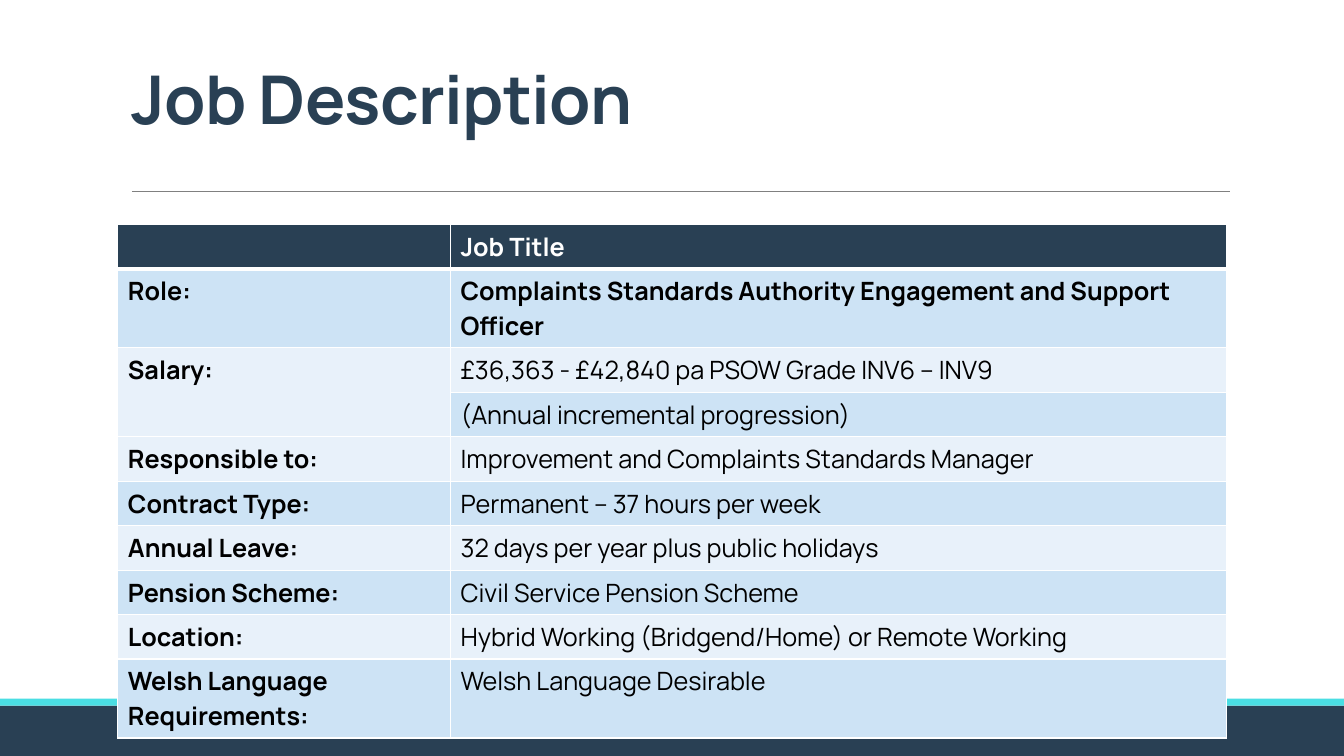
import pptx
import pptx.util
import pptx.dml.color
import pptx.enum.shapes
import pptx.enum.text
import pptx.oxml
import pptx.oxml.ns
from pptx.util import Pt

NAVY, TURQUOISE, WHITE, BLACK = "294054", "4ADEE3", "FFFFFF", "000000"
BAND_COLORS = ["E8F1FA", "CDE3F5"]


def color(value):
    return pptx.dml.color.RGBColor.from_string(value)


def write(frame, text, size=18, bold=False, ink=BLACK, line_spacing=None, tracking=0):
    para = frame.paragraphs[0]
    if line_spacing:
        para.line_spacing = line_spacing
    span = para.add_run()
    span.text = text
    span.font.name = "Manrope"
    span.font.size = Pt(size)
    span.font.bold = bold
    span.font.color.rgb = color(ink)
    if tracking:
        span._r.get_or_add_rPr().set("spc", str(tracking))


deck = pptx.Presentation()
deck.slide_width, deck.slide_height = Pt(960), Pt(540)
page = deck.slides.add_slide(deck.slide_layouts[6])

for top, height, fill in [(504, 36, NAVY), (499, 5, TURQUOISE)]:
    strip = page.shapes.add_shape(
        pptx.enum.shapes.MSO_SHAPE.RECTANGLE, Pt(0), Pt(top), Pt(960), Pt(height))
    strip.shadow.inherit = False
    strip.fill.solid()
    strip.fill.fore_color.rgb = color(fill)
    strip.line.fill.background()

rule = page.shapes.add_connector(
    pptx.enum.shapes.MSO_CONNECTOR.STRAIGHT, Pt(94.3), Pt(136.8), Pt(878.5), Pt(136.8))
rule.line.color.rgb = color("808080")
rule.line.width = Pt(0.5)
rule._element.spPr.append(pptx.oxml.parse_xml(
    f"<a:effectLst {pptx.oxml.ns.nsdecls('a')}/>"))

title = page.shapes.add_textbox(Pt(87), Pt(22.9), Pt(792), Pt(79.2))
title.text_frame.word_wrap = True
title.text_frame.vertical_anchor = pptx.enum.text.MSO_ANCHOR.BOTTOM
write(title.text_frame, "Job Description", size=48, bold=True, ink=NAVY,
      line_spacing=0.85, tracking=-50)

job_rows = [
    ("", "Job Title"),
    ("Role:", "Complaints Standards Authority Engagement and Support Officer"),
    ("Salary:", "£36,363 - £42,840 pa PSOW Grade INV6 – INV9"),
    ("", "(Annual incremental progression)"),
    ("Responsible to:", "Improvement and Complaints Standards Manager"),
    ("Contract Type:", "Permanent – 37 hours per week"),
    ("Annual Leave:", "32 days per year plus public holidays"),
    ("Pension Scheme:", "Civil Service Pension Scheme"),
    ("Location:", "Hybrid Working (Bridgend/Home) or Remote Working"),
    ("Welsh Language Requirements:", "Welsh Language Desirable"),
]
two_line_rows = {1, len(job_rows) - 1}
row_heights = [56.4 if index in two_line_rows else 31.8 for index in range(len(job_rows))]
table = page.shapes.add_table(
    len(job_rows), 2, Pt(84.2), Pt(160.2), Pt(792), Pt(sum(row_heights))).table
table.columns[0].width, table.columns[1].width = Pt(237.6), Pt(554.4)
table.cell(2, 0).merge(table.cell(3, 0))

for row_index, texts in enumerate(job_rows):
    table.rows[row_index].height = Pt(row_heights[row_index])
    for column_index, text in enumerate(texts):
        cell = table.cell(row_index, column_index)
        header = row_index == 0
        if text:
            write(cell.text_frame, text, bold=column_index == 0 or row_index < 2,
                  ink=WHITE if header else BLACK)
        else:
            cell.text_frame.paragraphs[0].font.size = Pt(18)
        borders = {"lnL": 1, "lnR": 1, "lnT": 3 if row_index == 1 else 1,
                   "lnB": 3 if header else 1}
        for side, width in borders.items():
            cell._tc.get_or_add_tcPr().append(pptx.oxml.parse_xml(
                f"<a:{side} {pptx.oxml.ns.nsdecls('a')} w='{Pt(width)}'><a:solidFill>"
                f"<a:srgbClr val='{WHITE}'/></a:solidFill></a:{side}>"))
        cell.fill.solid()
        cell.fill.fore_color.rgb = color(NAVY if header else BAND_COLORS[row_index % 2])

deck.save("out.pptx")
